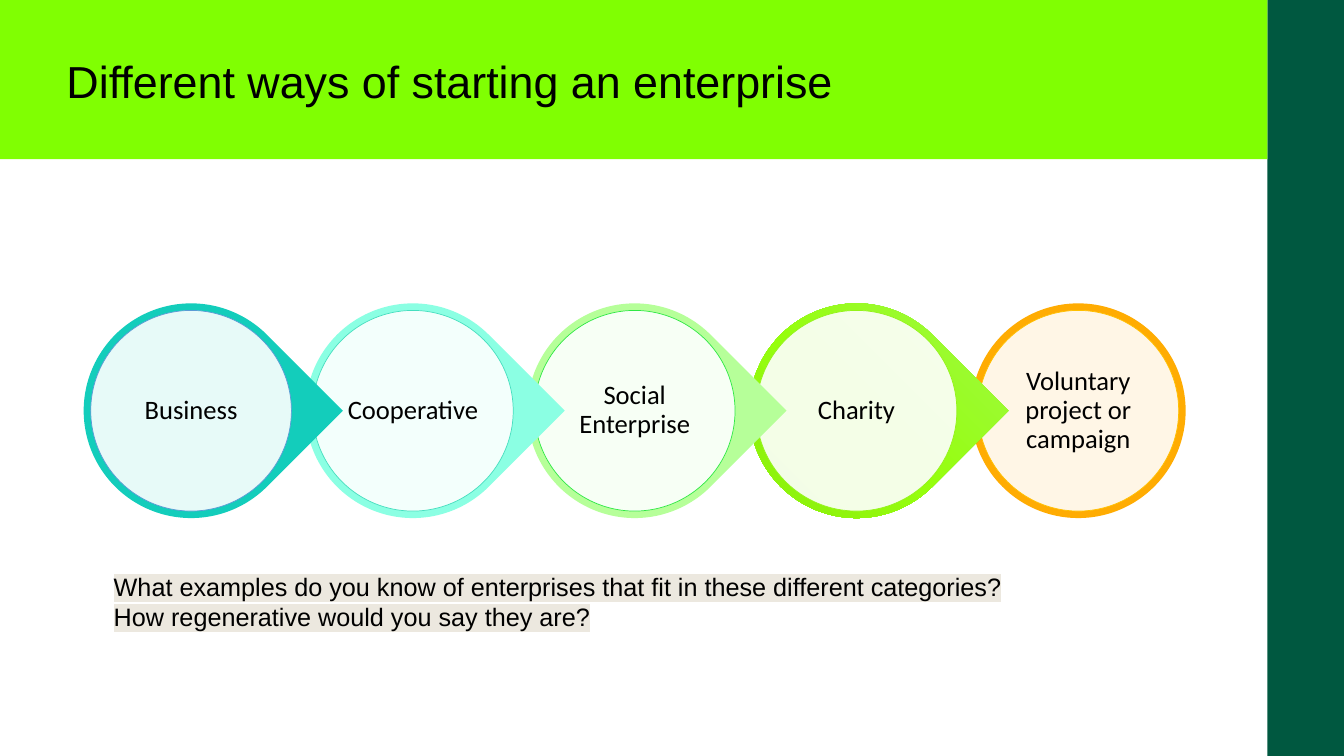
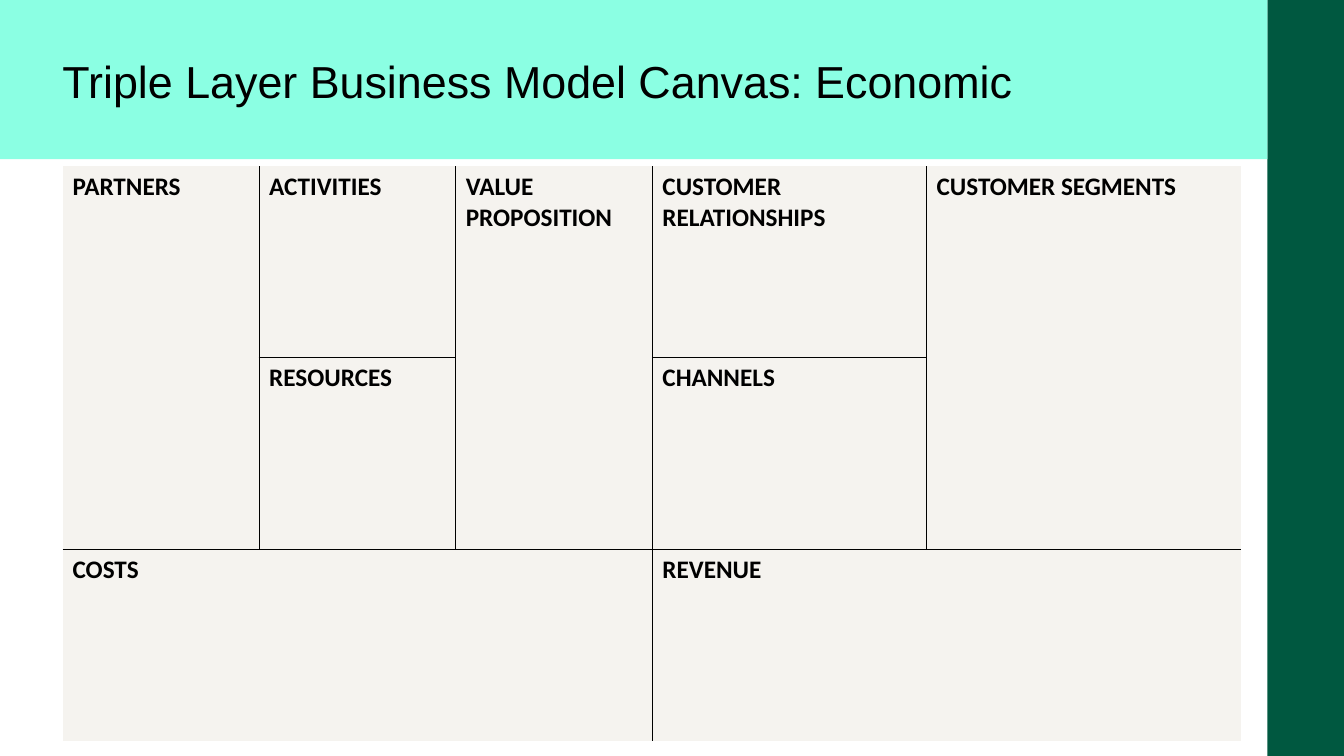
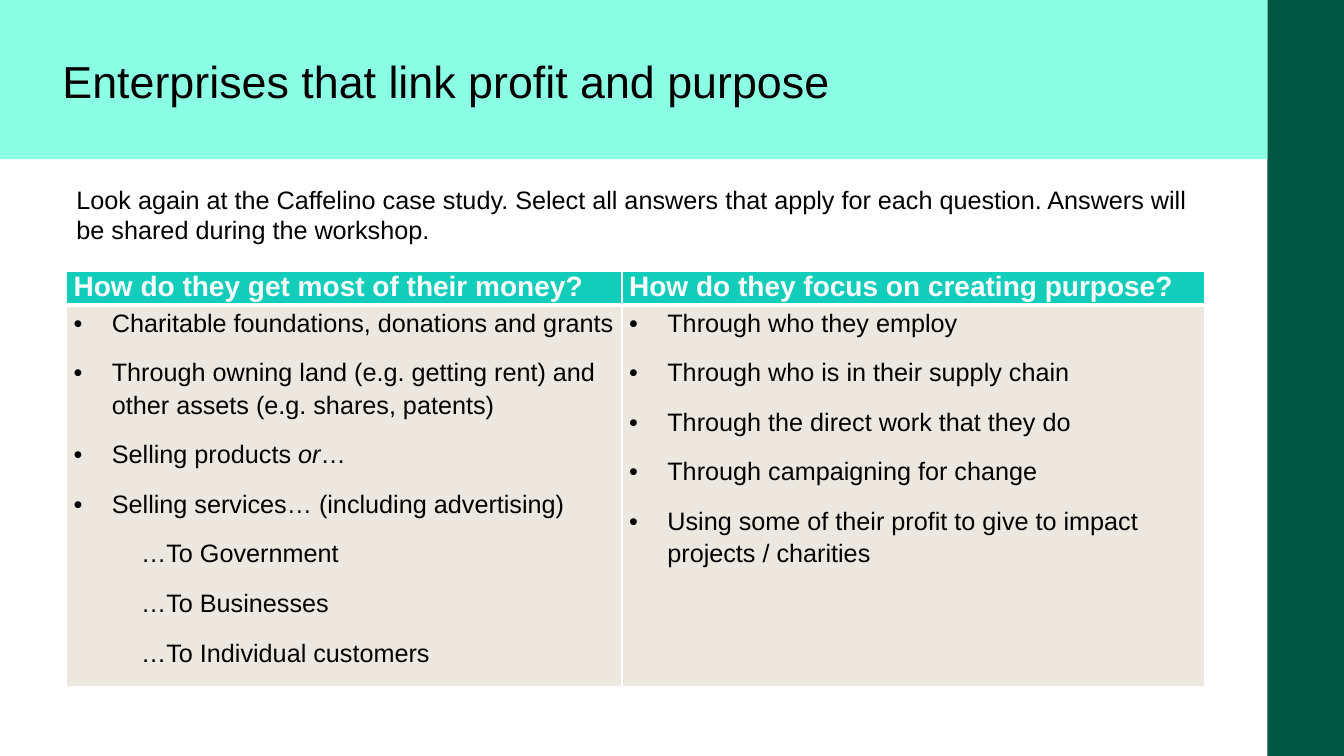
"""Build three slides about ways of starting and running an enterprise."""
import copy

import pptx
import pptx.dml.color
import pptx.enum.shapes
import pptx.enum.text
import pptx.oxml
import pptx.oxml.ns
import pptx.util
from pptx.dml.color import RGBColor
from pptx.enum.shapes import MSO_SHAPE
from pptx.util import Inches, Pt

BLACK = RGBColor(0x00, 0x00, 0x00)
WHITE = RGBColor(0xFF, 0xFF, 0xFF)
FOREST = RGBColor(0x00, 0x58, 0x40)
LIME = RGBColor(0x80, 0xFF, 0x02)
AQUA = RGBColor(0x8B, 0xFF, 0xE3)
TEAL = RGBColor(0x13, 0xCD, 0xBB)
MINT = RGBColor(0xB6, 0xFF, 0x99)
ORANGE = RGBColor(0xFF, 0xAC, 0x02)
SAND = RGBColor(0xEC, 0xE8, 0xDF)
PALE_SAND = RGBColor(0xF5, 0xF3, 0xEF)
LIME_GRADIENT = (
    RGBColor(0xA0, 0xF7, 0x4E),
    RGBColor(0x96, 0xFE, 0x0E),
    RGBColor(0x85, 0xE5, 0x09),
)

PLAIN_TABLE_STYLE = "{2D5ABB26-0587-4C30-8999-92F81FD0307C}"
BAND_WIDTH = 12.57
BAND_HEIGHT = 1.58

ENTERPRISES = [
    ("Business", TEAL, RGBColor(0x5B, 0x9B, 0xD5)),
    ("Cooperative", AQUA, RGBColor(0x46, 0xDE, 0xBF)),
    ("Social Enterprise", MINT, RGBColor(0x30, 0xE8, 0x45)),
    ("Charity", LIME_GRADIENT, RGBColor(0x94, 0xF3, 0x19)),
    ("Voluntary project or campaign", ORANGE, RGBColor(0xFF, 0xC0, 0x00)),
]

CANVAS_BLOCKS = [
    ("PARTNERS", 0, 0, 2, 1),
    ("ACTIVITIES", 0, 1, 1, 1),
    ("VALUE PROPOSITION", 0, 2, 2, 1),
    ("CUSTOMER RELATIONSHIPS", 0, 3, 1, 1),
    ("CUSTOMER SEGMENTS", 0, 4, 2, 1),
    ("RESOURCES", 1, 1, 1, 1),
    ("CHANNELS", 1, 3, 1, 1),
    ("COSTS", 2, 0, 1, 3),
    ("REVENUE", 2, 3, 1, 2),
]

QUESTIONS = [
    (
        "How do they get most of their money?",
        [
            ["Charitable foundations, donations and grants"],
            ["Through owning land (e.g. getting rent) and other assets (e.g. shares, patents)"],
            ["Selling products ", "or", "…"],
            ["Selling services… (including advertising)"],
        ],
        ["…To Government", "…To Businesses", "…To Individual customers"],
    ),
    (
        "How do they focus on creating purpose?",
        [
            ["Through who they employ"],
            ["Through who is in their supply chain"],
            ["Through the direct work that they do"],
            ["Through campaigning for change"],
            ["Using some of their profit to give to impact projects / charities"],
        ],
        [],
    ),
]


def add_run(paragraph, text, size, font="Arial", color=BLACK, bold=False, italic=False):
    """Add one formatted run and return it."""
    run = paragraph.add_run()
    run.text = text
    run.font.size = Pt(size)
    run.font.name = font
    run.font.color.rgb = color
    run.font.bold = bold
    run.font.italic = italic
    return run


def highlight(run, color):
    """Put a highlight colour behind a run."""
    fill = run.font._element.find(pptx.oxml.ns.qn("a:solidFill"))
    fill.addnext(pptx.oxml.parse_xml(
        f'<a:highlight {pptx.oxml.ns.nsdecls("a")}><a:srgbClr val="{color}"/></a:highlight>'))


def add_filled_shape(slide, kind, left, top, width, height, fill):
    """Add a preset shape without outline, with a solid or gradient fill."""
    shape = slide.shapes.add_shape(
        kind, Inches(left), Inches(top), Inches(width), Inches(height))
    shape.shadow.inherit = False
    shape.line.fill.background()
    if isinstance(fill, RGBColor):
        shape.fill.solid()
        shape.fill.fore_color.rgb = fill
    else:
        set_vertical_gradient(shape, fill)
    return shape


def set_vertical_gradient(shape, colors):
    """Fill a shape with evenly spaced colours from top to bottom."""
    shape.fill.gradient()
    shape.fill.gradient_angle = 270
    stop_list = shape.fill.gradient_stops[0]._gs.getparent()
    while len(stop_list) < len(colors):
        stop_list.append(copy.deepcopy(stop_list[0]))
    for index, (stop, color) in enumerate(zip(shape.fill.gradient_stops, colors)):
        stop.position = index / (len(colors) - 1)
        stop.color.rgb = color


def add_text_box(slide, left, top, width, height, margin=None):
    """Add a wrapping text box and return its text frame."""
    box = slide.shapes.add_textbox(Inches(left), Inches(top), Inches(width), Inches(height))
    frame = box.text_frame
    frame.word_wrap = True
    if margin is not None:
        frame.margin_left = frame.margin_right = Inches(margin)
        frame.margin_top = frame.margin_bottom = Inches(margin)
    return frame


def add_base_slide(presentation, title, band_color, title_left=0.62):
    """Add a blank slide with the side stripe, title band and title."""
    slide = presentation.slides.add_slide(presentation.slide_layouts[6])
    add_filled_shape(slide, MSO_SHAPE.RECTANGLE, BAND_WIDTH, 0, 0.76, 7.5, FOREST)
    add_filled_shape(slide, MSO_SHAPE.RECTANGLE, 0, 0, BAND_WIDTH, BAND_HEIGHT, band_color)
    frame = add_text_box(slide, title_left, 0.53, 11.33, 0.52, margin=0)
    add_run(frame.paragraphs[0], title, 32)
    return slide


def add_enterprise(slide, kind, left, name, fill, outline):
    """Add one coloured ring or drop with a translucent labelled disc."""
    top, ring, inset = 3.01, 2.13, 0.07
    outer = add_filled_shape(slide, kind, left, top, ring, ring, fill)
    if kind == MSO_SHAPE.TEAR:
        outer.rotation = 45
    size = ring - 2 * inset
    disc = add_filled_shape(
        slide, MSO_SHAPE.OVAL, left + inset, top + inset, size, size, WHITE)
    color = disc.fill._xPr.find(".//" + pptx.oxml.ns.qn("a:srgbClr"))
    color.append(pptx.oxml.parse_xml(
        f'<a:alpha {pptx.oxml.ns.nsdecls("a")} val="90000"/>'))
    disc.line.color.rgb = outline
    disc.line.width = Pt(0.5)
    frame = disc.text_frame
    frame.word_wrap = True
    frame.vertical_anchor = pptx.enum.text.MSO_ANCHOR.MIDDLE
    frame.margin_left = frame.margin_right = Inches(0.03)
    frame.margin_top = frame.margin_bottom = Inches(0.03)
    paragraph = frame.paragraphs[0]
    paragraph.alignment = pptx.enum.text.PP_ALIGN.CENTER
    paragraph.line_spacing = 0.9
    add_run(paragraph, name, 19, font="Calibri")


def add_plain_table(slide, left, top, widths, heights):
    """Add a table without style, with the given column widths and row heights."""
    frame = slide.shapes.add_table(
        len(heights), len(widths), Inches(left), Inches(top),
        Inches(sum(widths)), Inches(sum(heights)))
    table = frame.table
    table.first_row = table.horz_banding = False
    table._tbl.tblPr.find(pptx.oxml.ns.qn("a:tableStyleId")).text = PLAIN_TABLE_STYLE
    for column, width in zip(table.columns, widths):
        column.width = Inches(width)
    for row, height in zip(table.rows, heights):
        row.height = Inches(height)
    return table


def format_cell(cell, fill, border_color, border_widths):
    """Fill a cell and draw the borders given as a side-to-points mapping."""
    cell.fill.solid()
    cell.fill.fore_color.rgb = fill
    sides = [side for side in "LRTB" if side in border_widths]
    for index, side in enumerate(sides):
        cell._tc.tcPr.insert(index, pptx.oxml.parse_xml(
            f'<a:ln{side} {pptx.oxml.ns.nsdecls("a")} w="{Pt(border_widths[side])}">'
            f'<a:solidFill><a:srgbClr val="{border_color}"/></a:solidFill></a:ln{side}>'))


def format_answer(paragraph, is_first, indent, bullet=False):
    """Set spacing, indent and optional bullet of an answer paragraph."""
    properties = paragraph._p.get_or_add_pPr()
    properties.set("marL", str(Inches(indent)))
    properties.set("indent", str(-Inches(indent) if bullet else 0))
    if bullet:
        namespace = pptx.oxml.ns.nsdecls("a")
        properties.append(pptx.oxml.parse_xml(f'<a:buFont {namespace} typeface="Arial"/>'))
        properties.append(pptx.oxml.parse_xml(f'<a:buChar {namespace} char="•"/>'))
    paragraph.line_spacing = 1.16
    paragraph.space_after = Pt(6)
    if not is_first:
        paragraph.space_before = Pt(6)


def build_enterprise_slide(presentation):
    """Build the chain of enterprise types."""
    slide = add_base_slide(
        presentation, "Different ways of starting an enterprise", LIME, title_left=0.66)
    last = len(ENTERPRISES) - 1
    for index in range(last, -1, -1):
        kind = MSO_SHAPE.OVAL if index == last else MSO_SHAPE.TEAR
        add_enterprise(slide, kind, 0.83 + 2.2 * index, *ENTERPRISES[index])
    frame = add_text_box(slide, 1.03, 5.62, 10.7, 0.71)
    questions = [
        "What examples do you know of enterprises that fit in these different categories?",
        "How regenerative would you say they are?",
    ]
    for index, question in enumerate(questions):
        paragraph = frame.add_paragraph() if index else frame.paragraphs[0]
        highlight(add_run(paragraph, question, 18), SAND)


def build_canvas_slide(presentation):
    """Build the business model canvas table."""
    slide = add_base_slide(
        presentation, "Triple Layer Business Model Canvas: Economic", AQUA)
    widths, heights = [1.95, 1.95, 1.95, 2.72, 3.12], [1.9] * 3
    table = add_plain_table(slide, 0.62, 1.65, widths, heights)
    for label, row, column, row_span, column_span in CANVAS_BLOCKS:
        cell = table.cell(row, column)
        if row_span * column_span > 1:
            cell.merge(table.cell(row + row_span - 1, column + column_span - 1))
        inner_sides = {
            "L": column > 0,
            "R": column + column_span < len(widths),
            "T": row > 0,
            "B": row + row_span < len(heights),
        }
        format_cell(cell, PALE_SAND, BLACK,
                    {side: 1 for side, inner in inner_sides.items() if inner})
        add_run(cell.text_frame.paragraphs[0], label, 18, font="Calibri", bold=True)


def build_purpose_slide(presentation):
    """Build the table of questions on profit and purpose."""
    slide = add_base_slide(presentation, "Enterprises that link profit and purpose", AQUA)
    table = add_plain_table(slide, 0.66, 2.69, [5.51, 5.78], [0.32, 3.77])
    for column, (question, answers, customers) in enumerate(QUESTIONS):
        header, body = table.cell(0, column), table.cell(1, column)
        for cell in (header, body):
            cell.margin_left = cell.margin_right = Inches(0.07)
            cell.margin_top = cell.margin_bottom = 0
        format_cell(header, TEAL, WHITE, {"L": 1, "R": 1, "T": 1, "B": 3})
        format_cell(body, SAND, WHITE, {"L": 1, "R": 1, "T": 3, "B": 1})
        add_run(header.text_frame.paragraphs[0], question, 20, color=WHITE, bold=True)
        frame = body.text_frame
        for index, parts in enumerate(answers):
            paragraph = frame.add_paragraph() if index else frame.paragraphs[0]
            format_answer(paragraph, index == 0, 0.38, bullet=True)
            for part in parts:
                add_run(paragraph, part, 18, italic=part == "or")
        for customer in customers:
            paragraph = frame.add_paragraph()
            format_answer(paragraph, False, 0.67)
            add_run(paragraph, customer, 18)
    frame = add_text_box(slide, 0.66, 1.78, 11.29, 0.71)
    add_run(frame.paragraphs[0],
            "Look again at the Caffelino case study. Select all answers that apply for "
            "each question. Answers will be shared during the workshop.", 18)


def main():
    """Create and save the presentation."""
    presentation = pptx.Presentation()
    presentation.slide_width = Inches(13.33)
    presentation.slide_height = Inches(7.5)
    build_enterprise_slide(presentation)
    build_canvas_slide(presentation)
    build_purpose_slide(presentation)
    presentation.save("out.pptx")


if __name__ == "__main__":
    main()
